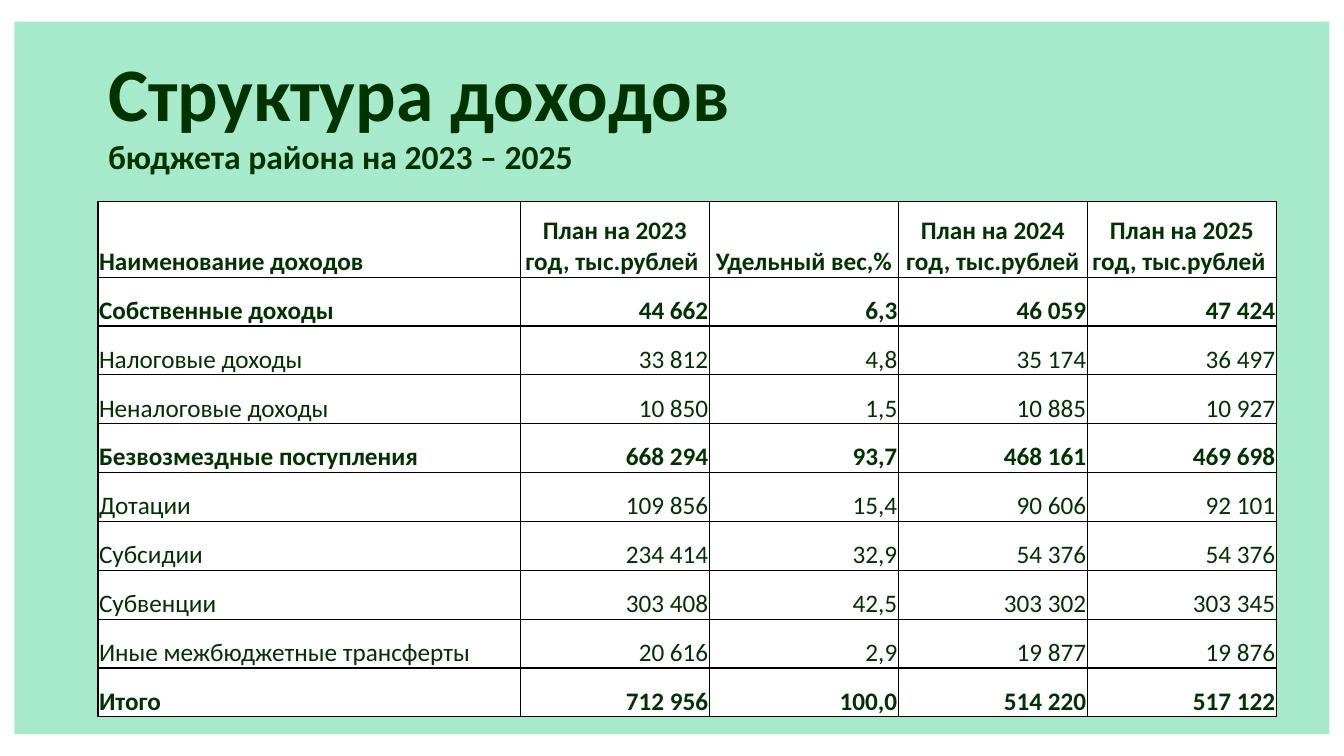
from lxml import etree
from pptx import Presentation
from pptx.dml.color import RGBColor
from pptx.enum import shapes, text
from pptx.oxml import ns
from pptx.util import Pt

MINT = RGBColor(0xA7, 0xEA, 0xCB)
DARK_GREEN = RGBColor(0x00, 0x33, 0x00)
WHITE = RGBColor(0xFF, 0xFF, 0xFF)
BLACK = RGBColor(0x00, 0x00, 0x00)
FONT = "Calibri"

HEADER = ["Наименование доходов", "План на 2023 год, тыс.рублей ", "Удельный вес,%",
          "План на 2024 год, тыс.рублей", "План на 2025 год, тыс.рублей "]
INCOME = [
    ["Собственные доходы", "44 662", "6,3", "46 059", "47 424"],
    ["Налоговые доходы", "33 812", "4,8", "35 174", "36 497"],
    ["Неналоговые доходы", "10 850", "1,5", "10 885", "10 927"],
    ["Безвозмездные поступления", "668 294", "93,7", "468 161", "469 698"],
    ["Дотации", "109 856", "15,4", "90 606", "92 101"],
    ["Субсидии", "234 414", "32,9", "54 376", "54 376"],
    ["Субвенции", "303 408", "42,5", "303 302", "303 345"],
    ["Иные межбюджетные трансферты", "20 616", "2,9", "19 877", "19 876"],
    ["Итого", "712 956", "100,0", "514 220", "517 122"],
]
TOTALS = {"Собственные доходы", "Безвозмездные поступления", "Итого"}

NAME_W, VALUE_W = 301.7, 135
HEADER_H, ROW_H = 54, 34.9


def write(p, words, size=18, bold=False, align=text.PP_ALIGN.LEFT):
    p.alignment = align
    r = p.add_run()
    r.text = words
    r.font.name = FONT
    r.font.size = Pt(size)
    r.font.bold = bold
    r.font.color.rgb = DARK_GREEN


def add_panel(slide, left, top, width, height):
    sp = slide.shapes.add_shape(shapes.MSO_SHAPE.RECTANGLE,
                                Pt(left), Pt(top), Pt(width), Pt(height))
    sp.shadow.inherit = False
    sp.fill.solid()
    sp.fill.fore_color.rgb = MINT
    sp.line.fill.background()
    # Send behind the title
    slide.shapes.element.insert(2, sp.element)


def set_title(slide, left, top, width, height):
    sp = slide.shapes.title
    sp.left, sp.top, sp.width, sp.height = Pt(left), Pt(top), Pt(width), Pt(height)
    tf = sp.text_frame
    tf.word_wrap = True
    tf.auto_size = text.MSO_AUTO_SIZE.NONE
    tf.vertical_anchor = text.MSO_ANCHOR.TOP
    write(tf.paragraphs[0], "Структура доходов", size=54, bold=True)
    write(tf.add_paragraph(), "бюджета района на 2023 – 2025", size=24, bold=True)


def set_borders(cell):
    tc_pr = cell._tc.get_or_add_tcPr()
    for side in ("lnL", "lnR", "lnT", "lnB"):
        ln = etree.SubElement(tc_pr, ns.qn(f"a:{side}"), w=str(Pt(1)))
        fill = etree.SubElement(ln, ns.qn("a:solidFill"))
        etree.SubElement(fill, ns.qn("a:srgbClr"), val=str(BLACK))


def fill_cell(cell, words, **fmt):
    cell.margin_left = cell.margin_right = cell.margin_top = Pt(0.75)
    cell.margin_bottom = 0
    cell.vertical_anchor = text.MSO_ANCHOR.BOTTOM
    set_borders(cell)
    cell.fill.solid()
    cell.fill.fore_color.rgb = WHITE
    write(cell.text_frame.paragraphs[0], words, **fmt)


def add_income_table(slide, left, top):
    rows = [HEADER] + INCOME
    width = NAME_W + VALUE_W * (len(HEADER) - 1)
    height = HEADER_H + ROW_H * len(INCOME)
    table = slide.shapes.add_table(len(rows), len(HEADER), Pt(left), Pt(top),
                                   Pt(width), Pt(height)).table
    for i, column in enumerate(table.columns):
        column.width = Pt(VALUE_W if i else NAME_W)
    for i, row in enumerate(rows):
        table.rows[i].height = Pt(ROW_H if i else HEADER_H)
        value_align = text.PP_ALIGN.RIGHT if i else text.PP_ALIGN.CENTER
        bold = i == 0 or row[0] in TOTALS
        for j, words in enumerate(row):
            align = value_align if j else text.PP_ALIGN.LEFT
            fill_cell(table.cell(i, j), words, bold=bold, align=align)


def main():
    prs = Presentation()
    prs.slide_width, prs.slide_height = Pt(960), Pt(540)
    slide = prs.slides.add_slide(prs.slide_layouts[5])

    # Background panel and heading
    add_panel(slide, 10.3, 15.4, 939.4, 509)
    set_title(slide, 70, 29, 872.6, 101.5)

    # Budget income by source
    add_income_table(slide, 70, 144)

    prs.save("out.pptx")


if __name__ == "__main__":
    main()
